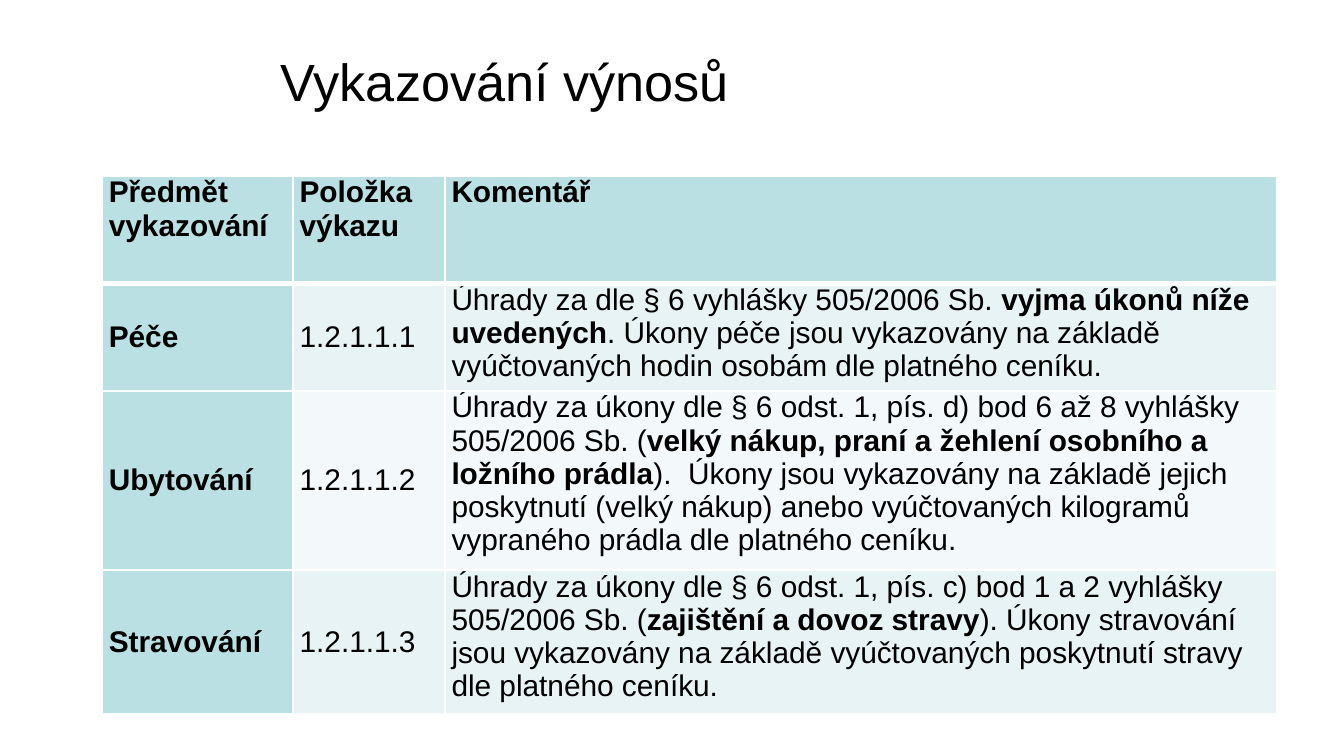
from lxml.etree import SubElement
from pptx import Presentation
from pptx.dml.color import RGBColor
from pptx.enum.text import MSO_ANCHOR
from pptx.oxml.ns import qn
from pptx.util import Inches, Pt

COLOURS = {
    "text": "000000",
    "border": "FFFFFF",
    "header": "BBE0E3",
    "odd": "E7F3F4",
    "even": "F3F9FA",
}
COLUMN_WIDTHS = [1.42, 1.13, 6.19]
ROW_HEIGHTS = [0.8, 0.8, 1.33, 1.06]
ROWS = [
    ["**Předmět vykazování**", "**Položka výkazu**", "**Komentář**"],
    ["**Péče**", "1.2.1.1.1",
     "Úhrady za dle § 6 vyhlášky 505/2006 Sb. **vyjma úkonů níže uvedených**. "
     "Úkony péče jsou vykazovány na základě vyúčtovaných hodin osobám dle platného ceníku."],
    ["**Ubytování**", "1.2.1.1.2",
     "Úhrady za úkony dle § 6 odst. 1, pís. d) bod 6 až 8 vyhlášky 505/2006 Sb. "
     "(**velký nákup, praní a žehlení osobního a ložního prádla**).  Úkony jsou "
     "vykazovány na základě jejich poskytnutí (velký nákup) anebo vyúčtovaných "
     "kilogramů vypraného prádla dle platného ceníku."],
    ["**Stravování**", "1.2.1.1.3",
     "Úhrady za úkony dle § 6 odst. 1, pís. c) bod 1 a 2 vyhlášky  505/2006 Sb. "
     "(**zajištění a dovoz stravy**). Úkony stravování  jsou vykazovány na základě "
     "vyúčtovaných poskytnutí stravy dle platného ceníku."],
]


def write(frame, text, size, font="Arial", colour="text"):
    """Fill a text frame; parts between ** marks become bold."""
    frame.word_wrap = True
    paragraph = frame.paragraphs[0]
    for index, part in enumerate(text.split("**")):
        if part:
            run = paragraph.add_run()
            run.text = part
            run.font.name = font
            run.font.size = Pt(size)
            run.font.bold = index % 2 == 1
            run.font.color.rgb = RGBColor.from_string(COLOURS[colour])


def set_borders(cell, **widths):
    """Draw the cell borders; widths in points by side: L, R, T, B."""
    properties = cell._tc.get_or_add_tcPr()
    for side, width in widths.items():
        line = SubElement(properties, qn(f"a:ln{side}"), w=str(Pt(width)))
        fill = SubElement(line, qn("a:solidFill"))
        SubElement(fill, qn("a:srgbClr"), val=COLOURS["border"])


class SlideBuilder:
    def __init__(self, slide):
        self.slide = slide
        self.title_size = 28
        self.body_size = 16

    def title(self, text, left, top, width, height):
        box = self.slide.shapes.add_textbox(
            Inches(left), Inches(top), Inches(width), Inches(height))
        frame = box.text_frame
        frame.margin_left = frame.margin_right = 0
        frame.margin_top = frame.margin_bottom = 0
        frame.vertical_anchor = MSO_ANCHOR.BOTTOM
        write(frame, text, self.title_size)

    def table(self, rows, left, top, widths, heights):
        table = self.slide.shapes.add_table(
            len(rows), len(widths), Inches(left), Inches(top),
            Inches(sum(widths)), Inches(sum(heights))).table
        for column, width in zip(table.columns, widths):
            column.width = Inches(width)
        for row, height in zip(table.rows, heights):
            row.height = Inches(height)
        for r, texts in enumerate(rows):
            for c, text in enumerate(texts):
                self.cell(table.cell(r, c), text, r, c)

    def cell(self, cell, text, row, column):
        cell.margin_left = cell.margin_right = Inches(0.05)
        cell.margin_top = cell.margin_bottom = 0
        is_label = row > 0 and column < 2
        cell.vertical_anchor = MSO_ANCHOR.MIDDLE if is_label else MSO_ANCHOR.TOP
        set_borders(cell, L=1, R=1, T=3 if row == 1 else 1, B=3 if row == 0 else 1)
        band = "odd" if row % 2 else "even"
        fill = "header" if row == 0 or column == 0 else band
        cell.fill.solid()
        cell.fill.fore_color.rgb = RGBColor.from_string(COLOURS[fill])
        write(cell.text_frame, text, self.body_size)


def main():
    presentation = Presentation()
    presentation.slide_width = Inches(10)
    presentation.slide_height = Inches(10 * 9 / 16)
    blank = presentation.slide_layouts[6]
    builder = SlideBuilder(presentation.slides.add_slide(blank))
    builder.title("Vykazování výnosů", 2.09, 0, 7.41, 0.83)
    builder.table(ROWS, 0.76, 1.31, COLUMN_WIDTHS, ROW_HEIGHTS)
    presentation.save("out.pptx")


if __name__ == "__main__":
    main()
